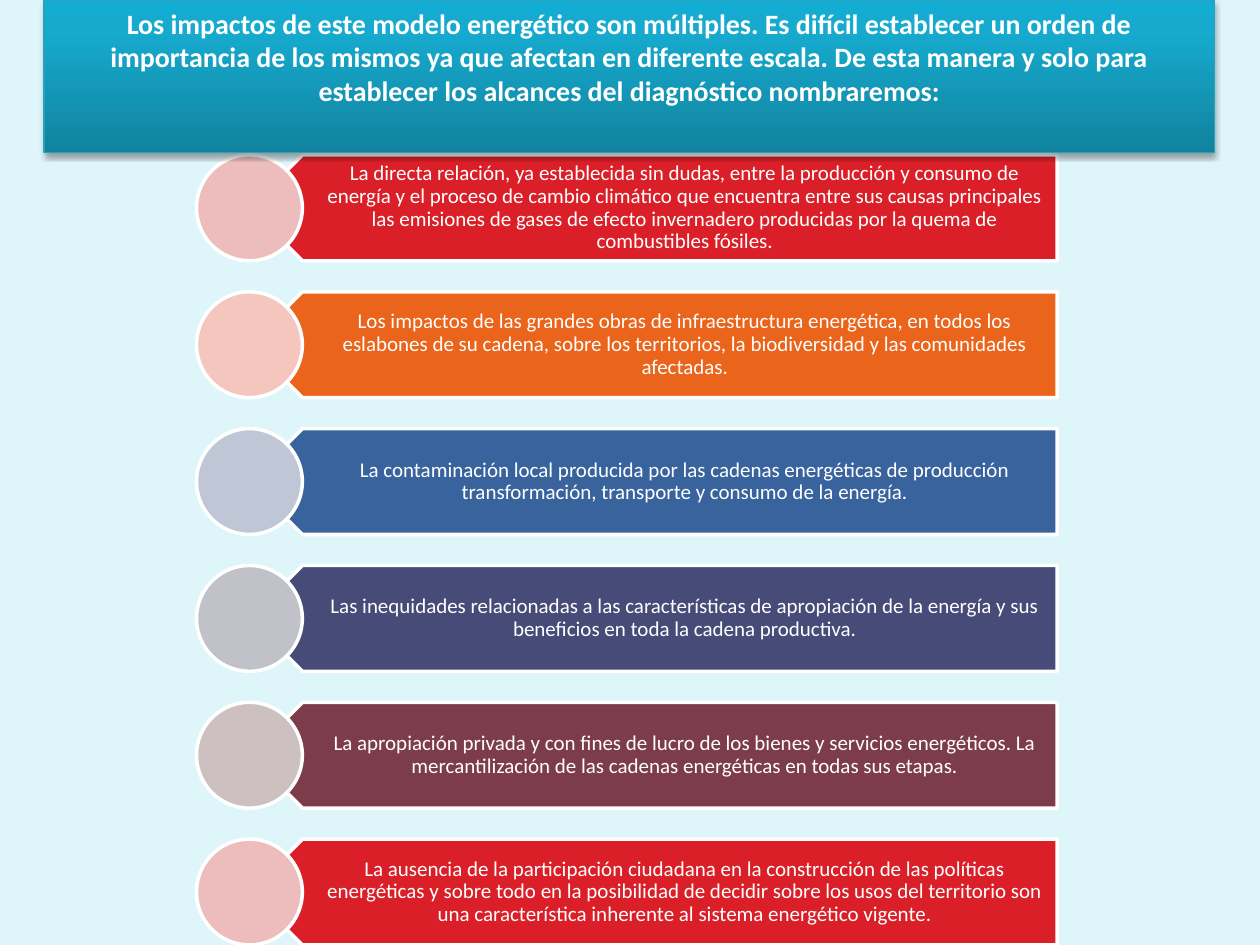
from copy import deepcopy

from pptx import Presentation
from pptx.dml.color import RGBColor
from pptx.enum.shapes import MSO_SHAPE as Shape
from pptx.enum.text import MSO_ANCHOR as Anchor, MSO_AUTO_SIZE as AutoSize, PP_ALIGN as Align
from pptx.oxml import parse_xml
from pptx.oxml.ns import nsdecls, qn
from pptx.util import Inches, Pt

FONT = "Calibri"
WHITE = "FFFFFF"
TITLE = (
    "Los impactos de este modelo energético son múltiples. Es difícil establecer un orden de "
    "importancia de los mismos ya que afectan en diferente escala. De esta manera y solo para "
    "establecer los alcances del diagnóstico nombraremos:"
)
TITLE_STOPS = [(0, "11839F"), (0.8, "16AACE"), (1, "13ADD3")]
FIRST_TOP, ROW_PITCH, ROW_HEIGHT = 1.23, 1.086, 0.84

# Arrow colour, circle colour, wording
IMPACTS = [
    ("DA1F28", "EDBDBE",
     "La directa relación, ya establecida sin dudas, entre la producción y consumo de energía y el "
     "proceso de cambio climático que encuentra entre sus causas principales las emisiones de gases "
     "de efecto invernadero producidas por la quema de combustibles fósiles."),
    ("EB641B", "F5C6BD",
     "Los impactos de las grandes obras de infraestructura energética, en todos los eslabones de su "
     "cadena, sobre los territorios, la biodiversidad y las comunidades afectadas."),
    ("39639D", "BFC6D5",
     "La contaminación local producida por las cadenas energéticas de producción transformación, "
     "transporte y consumo de la energía."),
    ("474B78", "C1C1CA",
     "Las inequidades relacionadas a las características de apropiación de la energía y sus "
     "beneficios en toda la cadena productiva."),
    ("7D3C4A", "CCC0C1",
     "La apropiación privada y con fines de lucro de los bienes y servicios energéticos. La "
     "mercantilización de las cadenas energéticas en todas sus etapas."),
    ("DA1F28", "EDBDBE",
     "La ausencia de la participación ciudadana en la construcción de las políticas energéticas y "
     "sobre todo en la posibilidad de decidir sobre los usos del territorio son una característica "
     "inherente al sistema energético vigente."),
]


def color(value):
    return RGBColor.from_string(value)


def set_all(target, values):
    for name, value in values.items():
        setattr(target, name, value)


def set_line(shape, value, width):
    shape.line.color.rgb = color(value)
    shape.line.width = Pt(width)


def write(shape, text, size, frame_format, bold=False, spacing=1.0):
    frame = shape.text_frame
    set_all(frame, {"word_wrap": True, "auto_size": AutoSize.NONE, **frame_format})
    para = frame.paragraphs[0]
    set_all(para, {"alignment": Align.CENTER, "line_spacing": spacing})
    span = para.add_run()
    span.text = text
    set_all(span.font, {"name": FONT, "size": Pt(size), "bold": bold})
    span.font.color.rgb = color(WHITE)


def add_shape(page, kind, left, top, width, fill, rotation=0):
    shape = page.shapes.add_shape(
        kind, Inches(left), Inches(top), Inches(width), Inches(ROW_HEIGHT))
    shape.rotation = rotation
    shape.shadow.inherit = False
    shape.fill.solid()
    shape.fill.fore_color.rgb = color(fill)
    set_line(shape, WHITE, 2)


def add_impact(page, top, arrow_fill, circle_fill, text):
    add_shape(page, Shape.PENTAGON, 1.98, top, 6.41, arrow_fill, rotation=180)
    box = page.shapes.add_textbox(Inches(2.19), Inches(top), Inches(6.21), Inches(ROW_HEIGHT))
    write(box, text, 12, {
        "vertical_anchor": Anchor.MIDDLE,
        "margin_left": Inches(0.37), "margin_right": Inches(0.09),
        "margin_top": Inches(0.05), "margin_bottom": Inches(0.05),
    }, spacing=0.9)
    add_shape(page, Shape.OVAL, 1.56, top, ROW_HEIGHT, circle_fill)


def fill_gradient(shape, stops, angle):
    shape.fill.gradient()
    shape.fill.gradient_angle = angle
    stop_list = shape.element.spPr.find(qn("a:gradFill")).find(qn("a:gsLst"))
    while len(stop_list) < len(stops):
        stop_list.append(deepcopy(stop_list[-1]))
    for stop, (position, value) in zip(shape.fill.gradient_stops, stops):
        stop.position = position
        stop.color.rgb = color(value)


def add_shadow(shape):
    shape.element.spPr.append(parse_xml(
        f'<a:effectLst {nsdecls("a")}>'
        f'<a:outerShdw blurRad="{Pt(3.1)}" dist="{Pt(1.8)}" dir="5400000" rotWithShape="0">'
        '<a:srgbClr val="000000"><a:alpha val="35000"/></a:srgbClr>'
        '</a:outerShdw></a:effectLst>'))


def format_title(page):
    title = page.shapes.title
    set_all(title, {"left": Inches(0.35), "top": Inches(0),
                    "width": Inches(9.29), "height": Inches(1.21)})
    fill_gradient(title, TITLE_STOPS, 90)
    set_line(title, "28A1BE", 0.75)
    add_shadow(title)
    write(title, TITLE, 16, {"vertical_anchor": Anchor.TOP}, bold=True)
    # Bring the banner in front so its shadow falls on the first row
    page.shapes._spTree.append(title.element)


def main():
    deck = Presentation()
    set_all(deck, {"slide_width": Inches(10), "slide_height": Inches(7.5)})
    page = deck.slides.add_slide(deck.slide_layouts[5])
    page.background.fill.solid()
    page.background.fill.fore_color.rgb = color("DEF5FA")

    for row, impact in enumerate(IMPACTS):
        add_impact(page, FIRST_TOP + row * ROW_PITCH, *impact)
    format_title(page)
    deck.save("out.pptx")


if __name__ == "__main__":
    main()
